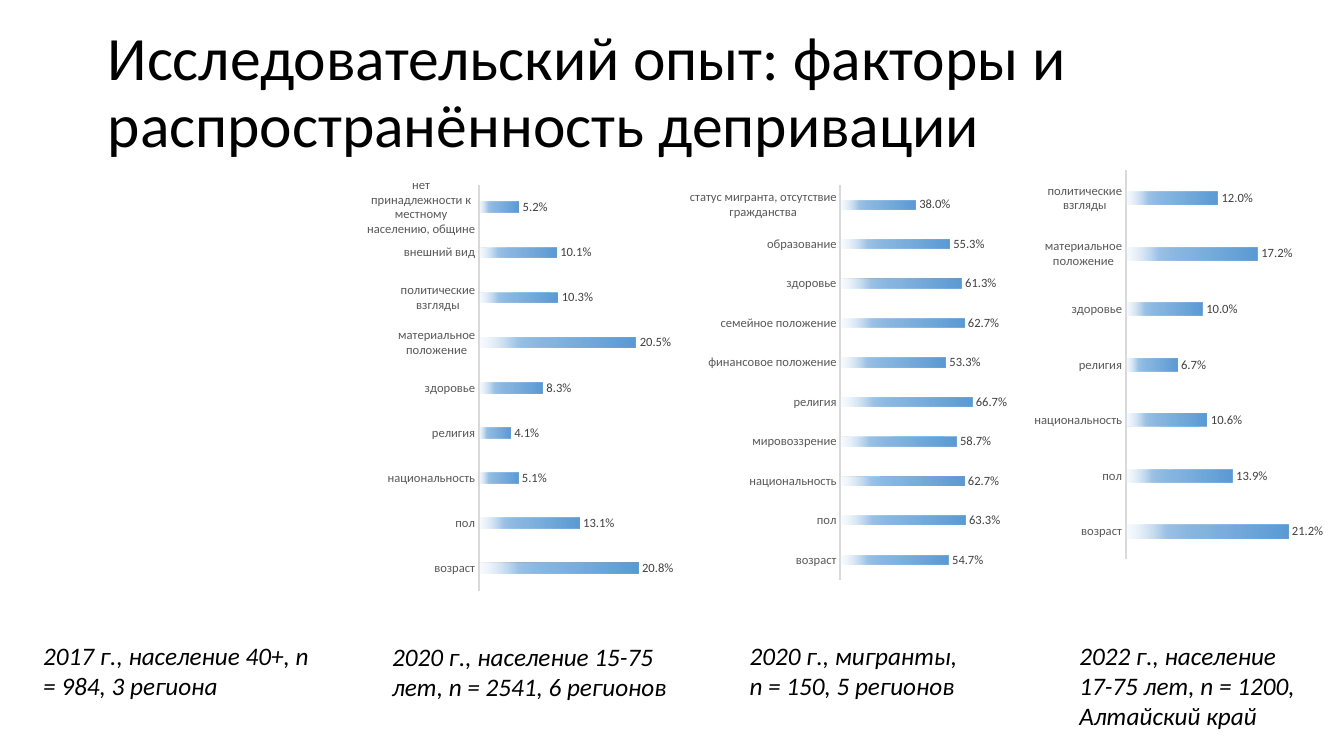
"""Build a slide comparing deprivation factors across four surveys."""
from dataclasses import dataclass

from lxml import etree
from pptx import Presentation
from pptx.chart.data import CategoryChartData
from pptx.dml.color import RGBColor
from pptx.enum.chart import XL_CHART_TYPE, XL_LABEL_POSITION, XL_TICK_MARK
from pptx.enum.text import MSO_ANCHOR, MSO_AUTO_SIZE, PP_ALIGN
from pptx.oxml import parse_xml
from pptx.oxml.ns import nsdecls, qn
from pptx.util import Cm, Pt

BARS = XL_CHART_TYPE.BAR_CLUSTERED
OUTSIDE = XL_LABEL_POSITION.OUTSIDE_END
NO_TICK = XL_TICK_MARK.NONE
MIDDLE = MSO_ANCHOR.MIDDLE
FIXED, GROW = MSO_AUTO_SIZE.NONE, MSO_AUTO_SIZE.SHAPE_TO_FIT_TEXT
LEFT = PP_ALIGN.LEFT
TITLE_ONLY = 5
PERCENT = "###0.0%"


@dataclass(frozen=True)
class Theme:
    """Hold the font, colours and type sizes of the slide."""
    font: str = "Calibri"
    ink: str = "000000"
    axis_text: str = "595959"
    label_text: str = "404040"
    axis_line: str = "D9D9D9"
    paper: str = "FFFFFF"
    title: int = 44
    caption: int = 18
    chart: int = 10
    small: int = 9
    bar_stops: tuple = ((0, "5B9BD5", 100), (51, "5B9BD5", 75),
                        (75, "9DC3E6", 100), (100, "DEEBF7", 15))


THEME = Theme()

TITLE = "Исследовательский опыт: факторы и распространённость депривации"

CAPTIONS = [
    ("2017 г., население 40+, n = 984, 3 региона", (0.84, 16, 7.59, 1.8)),
    ("2020 г., население 15-75 лет, n = 2541, 6 регионов", (9.63, 16.03, 7.8, 1.8)),
    ("2020 г., мигранты, n = 150, 5 регионов", (18.64, 16, 5.92, 1.8)),
    ("2022 г., население 17-75 лет, n = 1200, Алтайский край", (26.95, 16, 6.3, 2.57)),
]

SURVEYS = [
    {"box": (9.25, 4.11, 7.8, 11), "plot": (0.36, 0.05, 0.62, 0.93), "top": 0.25,
     "factors": {"возраст": 20.8, "пол": 13.1, "национальность": 5.1, "религия": 4.1,
                 "здоровье": 8.3, "материальное положение": 20.5,
                 "политические взгляды": 10.3, "внешний вид": 10.1,
                 "нет принадлежности к местному населению, общине": 5.2}},
    {"box": (17.2, 4.45, 8.18, 10.69), "plot": (0.49, 0.02, 0.49, 0.93), "top": 0.8,
     "factors": {"возраст": 54.7, "пол": 63.3, "национальность": 62.7,
                 "мировоззрение": 58.7, "религия": 66.7, "финансовое положение": 53.3,
                 "семейное положение": 62.7, "здоровье": 61.3, "образование": 55.3,
                 "статус мигранта, отсутствие гражданства": 38.0}},
    {"box": (25.93, 4.09, 7.42, 10.21), "plot": (0.33, 0.02, 0.65, 0.96), "top": 0.25,
     "factors": {"возраст": 21.2, "пол": 13.9, "национальность": 10.6, "религия": 6.7,
                 "здоровье": 10.0, "материальное положение": 17.2,
                 "политические взгляды": 12.0}},
]


def apply(target, values):
    """Set every attribute named in a dict of format values."""
    for name, value in values.items():
        setattr(target, name, value)


def style_font(font, size, colour, **extra):
    """Give a font its face, size and colour."""
    apply(font, {"name": THEME.font, "size": Pt(size), **extra})
    font.color.rgb = RGBColor.from_string(colour)


def place(shape, box):
    """Move and size a shape by centimetres."""
    apply(shape, dict(zip(("left", "top", "width", "height"), map(Cm, box))))


def add_title(page):
    """Fill and format the title placeholder."""
    title = page.shapes.title
    place(title, (2.46, 0.53, 29.21, 3.68))
    apply(title.text_frame, {"text": TITLE, "word_wrap": True,
                             "auto_size": FIXED, "vertical_anchor": MIDDLE})
    para = title.text_frame.paragraphs[0]
    apply(para, {"alignment": LEFT, "line_spacing": 0.9})
    style_font(para.runs[0].font, THEME.title, THEME.ink)


def add_caption(page, text, box):
    """Add an italic survey description."""
    frame = page.shapes.add_textbox(*map(Cm, box)).text_frame
    apply(frame, {"text": text, "word_wrap": True, "auto_size": GROW})
    style_font(frame.paragraphs[0].runs[0].font, THEME.caption, THEME.ink, italic=True)


def fill_bars(series):
    """Fade the bars towards the category axis."""
    series.invert_if_negative = False
    series.format.fill.gradient()
    stops = "".join(
        f'<a:gs pos="{pos * 1000}"><a:srgbClr val="{colour}">'
        f'<a:alpha val="{alpha * 1000}"/></a:srgbClr></a:gs>'
        for pos, colour, alpha in THEME.bar_stops)
    fade = parse_xml(f'<a:gradFill {nsdecls("a")}><a:gsLst>{stops}</a:gsLst>'
                     f'<a:lin ang="{180 * 60000}" scaled="0"/></a:gradFill>')
    plain = series._element.find(".//" + qn("a:gradFill"))
    plain.getparent().replace(plain, fade)


def set_plot_area(chart, fractions):
    """Fix the inner plot area and paint the chart background."""
    space = chart._chartSpace
    area = space.find(".//" + qn("c:plotArea"))
    for layout in area.findall(qn("c:layout")):
        area.remove(layout)
    layout = etree.Element(qn("c:layout"))
    manual = etree.SubElement(layout, qn("c:manualLayout"))
    settings = {"layoutTarget": "inner", "xMode": "edge", "yMode": "edge",
                **dict(zip("xywh", fractions))}
    for name, value in settings.items():
        etree.SubElement(manual, qn(f"c:{name}")).set("val", str(value))
    area.insert(0, layout)
    space.find(qn("c:chart")).addnext(parse_xml(
        f'<c:spPr {nsdecls("c", "a")}><a:solidFill><a:srgbClr val="{THEME.paper}"/>'
        '</a:solidFill><a:ln><a:noFill/></a:ln></c:spPr>'))


def format_axes(chart, top):
    """Show the category axis and hide the value axis."""
    axis = chart.category_axis
    apply(axis, {"major_tick_mark": NO_TICK, "minor_tick_mark": NO_TICK,
                 "has_major_gridlines": False})
    style_font(axis.tick_labels.font, THEME.small, THEME.axis_text)
    axis.format.line.width = Pt(1.5)
    axis.format.line.color.rgb = RGBColor.from_string(THEME.axis_line)
    apply(chart.value_axis, {"visible": False, "has_major_gridlines": False,
                             "minimum_scale": 0, "maximum_scale": top})


def add_survey(page, survey):
    """Add a bar chart of the factors in one survey."""
    data = CategoryChartData(number_format=PERCENT)
    data.categories = list(survey["factors"])
    data.add_series("Series 1", [round(share / 100, 3)
                                 for share in survey["factors"].values()])
    chart = page.shapes.add_chart(BARS, *map(Cm, survey["box"]), data).chart
    apply(chart, {"has_title": False, "has_legend": False})
    style_font(chart.font, THEME.chart, THEME.ink)
    format_axes(chart, survey["top"])
    plot = chart.plots[0]
    apply(plot, {"gap_width": 326, "overlap": -58, "vary_by_categories": False,
                 "has_data_labels": True})
    apply(plot.data_labels, {"show_value": True, "position": OUTSIDE,
                             "number_format": PERCENT, "number_format_is_linked": False})
    style_font(plot.data_labels.font, THEME.small, THEME.label_text)
    fill_bars(plot.series[0])
    set_plot_area(chart, survey["plot"])


def main():
    """Assemble and save the deck."""
    deck = Presentation()
    apply(deck, {"slide_width": Cm(33.87), "slide_height": Cm(19.05)})
    page = deck.slides.add_slide(deck.slide_layouts[TITLE_ONLY])
    add_title(page)
    for survey in SURVEYS:
        add_survey(page, survey)
    for text, box in CAPTIONS:
        add_caption(page, text, box)
    deck.save("out.pptx")


if __name__ == "__main__":
    main()
